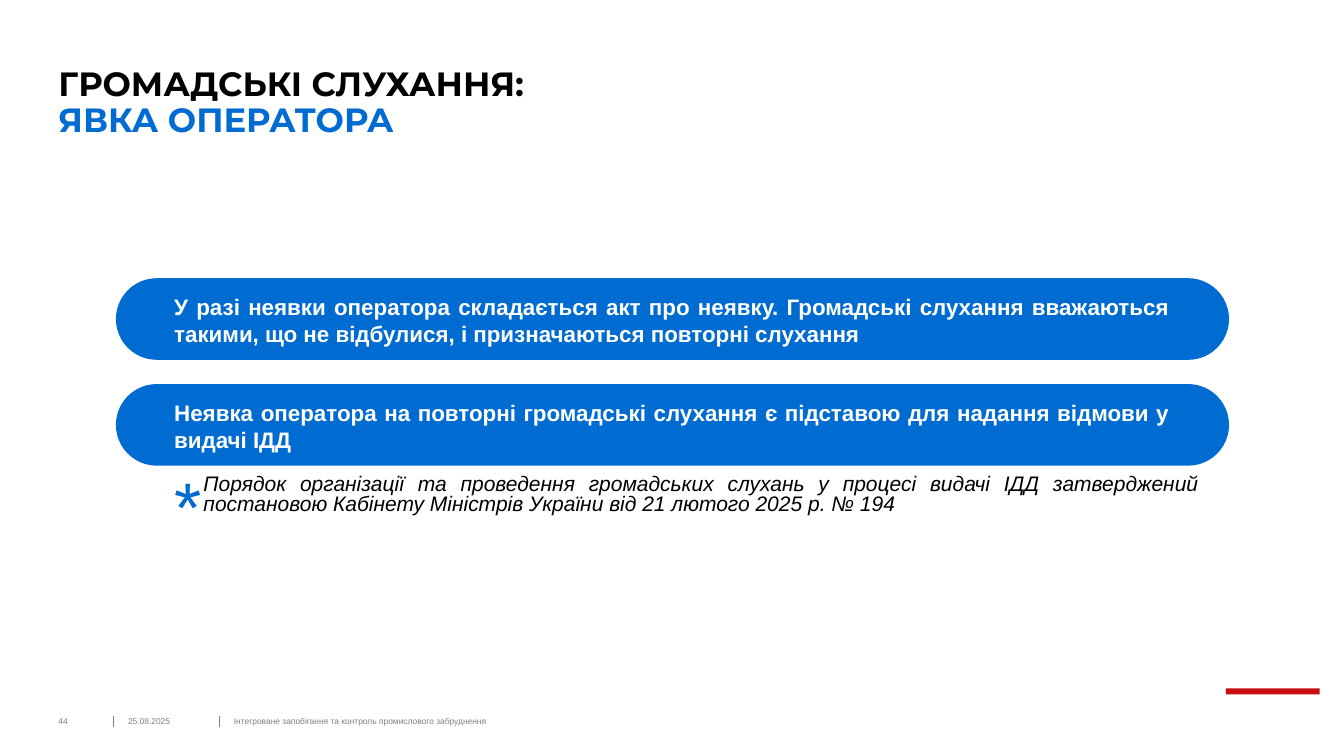
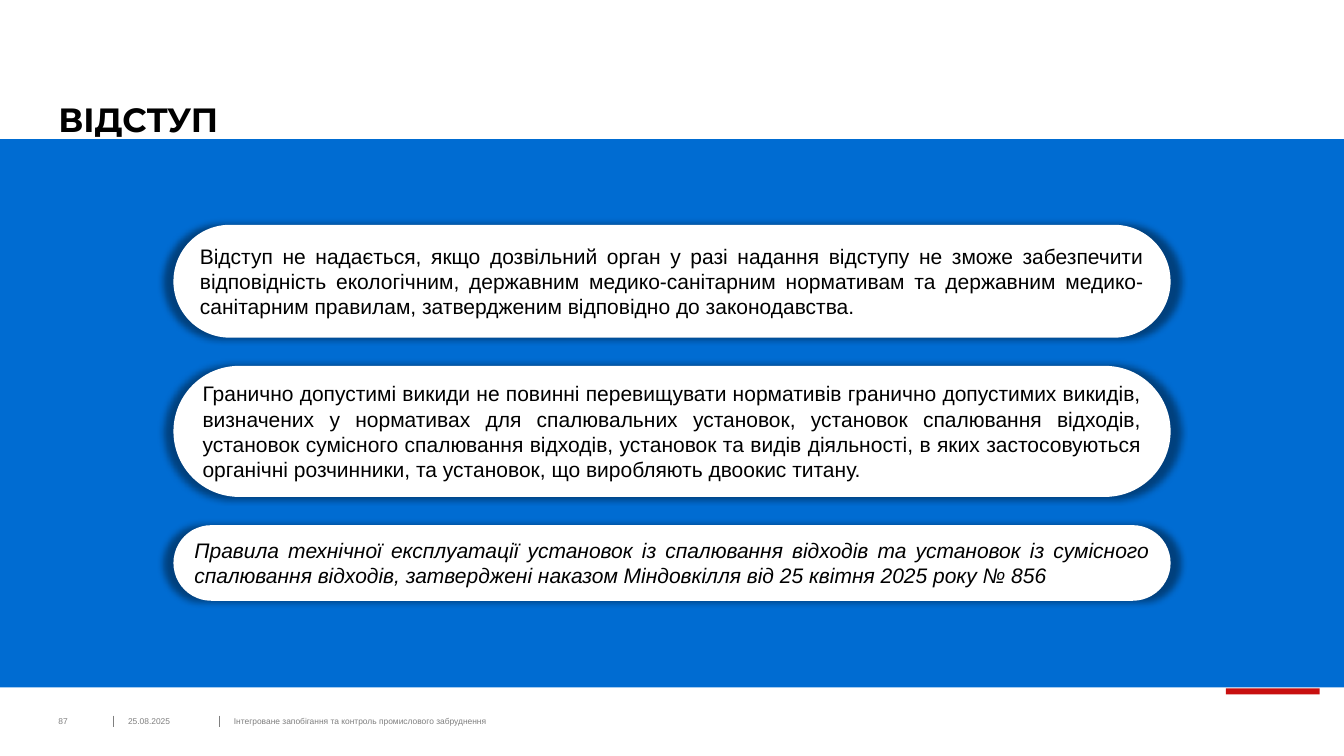
"""Build two slides on public hearings and derogations in integrated permitting."""
from lxml.etree import SubElement
from pptx import Presentation
from pptx.dml.color import RGBColor
from pptx.enum.shapes import MSO_CONNECTOR as Connector, MSO_SHAPE as Shape
from pptx.enum.text import MSO_ANCHOR as Anchor, PP_ALIGN as Align
from pptx.oxml import parse_xml
from pptx.oxml.ns import nsdecls, qn
from pptx.util import Inches, Pt

BLUE = RGBColor(0x00, 0x6C, 0xD2)
RED = RGBColor(0xC8, 0x0F, 0x0F)
GREY = RGBColor(0x7F, 0x7F, 0x7F)
BLACK = RGBColor(0x00, 0x00, 0x00)
WHITE = RGBColor(0xFF, 0xFF, 0xFF)

TITLE_FONT = "Montserrat"
BODY_FONT = "Arial"
MARGIN = 0.58
PADDING = (0.1, 0.05)
SLIDE_WIDTH = 13.33

DATE = "25.08.2025"
TOPIC = "Інтегроване запобігання та контроль промислового забруднення"

ATTENDANCE_RULES = [
    "У разі неявки оператора складається акт про неявку. Громадські слухання вважаються "
    "такими, що не відбулися, і призначаються повторні слухання",
    "Неявка оператора на повторні громадські слухання є підставою для надання відмови у "
    "видачі ІДД",
]
PROCEDURE_NOTE = (
    "Порядок організації та проведення громадських слухань у процесі видачі ІДД "
    "затверджений постановою Кабінету Міністрів України від 21 лютого 2025 р. № 194"
)
DEROGATION_RULES = [
    (1.12, False,
     "Відступ не надається, якщо дозвільний орган у разі надання відступу не зможе "
     "забезпечити відповідність екологічним, державним медико-санітарним нормативам та "
     "державним медико-санітарним правилам, затвердженим відповідно до законодавства."),
    (1.3, False,
     "Гранично допустимі викиди не повинні перевищувати нормативів гранично допустимих "
     "викидів, визначених у нормативах для спалювальних установок, установок спалювання "
     "відходів, установок сумісного спалювання відходів, установок та видів діяльності, в "
     "яких застосовуються органічні розчинники, та установок, що виробляють двоокис титану."),
    (0.75, True,
     "Правила технічної експлуатації установок із спалювання відходів та установок із "
     "сумісного спалювання відходів, затверджені наказом Міндовкілля від 25 квітня 2025 "
     "року № 856"),
]


def set_frame(frame, anchor, padding):
    """Set wrapping, anchor and insets of a text frame."""
    frame.word_wrap = True
    frame.vertical_anchor = anchor
    frame.margin_left = frame.margin_right = Inches(padding[0])
    frame.margin_top = frame.margin_bottom = Inches(padding[1])


def add_span(para, text, size, color, font=BODY_FONT, bold=False, italic=False):
    """Add one formatted run to a paragraph."""
    span = para.add_run()
    span.text = text
    span.font.name = font
    span.font.size = Pt(size)
    span.font.bold = bold
    span.font.italic = italic
    span.font.color.rgb = color


def add_box(page, place, anchor=Anchor.TOP, padding=PADDING, align=Align.LEFT, spacing=None):
    """Add a text box and return its first paragraph."""
    box = page.shapes.add_textbox(*map(Inches, place))
    set_frame(box.text_frame, anchor, padding)
    para = box.text_frame.paragraphs[0]
    para.alignment = align
    para.line_spacing = spacing
    return para


def add_block(page, kind, place, color):
    """Add a filled shape without outline or shadow."""
    block = page.shapes.add_shape(kind, *map(Inches, place))
    block.shadow.inherit = False
    block.fill.solid()
    block.fill.fore_color.rgb = color
    block.line.fill.background()
    return block


def add_pill(page, place, color):
    """Add a rectangle with fully rounded ends."""
    pill = add_block(page, Shape.ROUNDED_RECTANGLE, place, color)
    pill.adjustments[0] = 0.5
    return pill


def add_glow_shadow(shape):
    """Give a shape a soft shadow spreading from its centre."""
    effects = shape.element.spPr.find(qn("a:effectLst"))
    effects.append(parse_xml(
        f'<a:outerShdw {nsdecls("a")} blurRad="{Pt(5)}" sx="102000" sy="102000" '
        f'algn="ctr" rotWithShape="0"><a:srgbClr val="{BLACK}">'
        '<a:alpha val="40000"/></a:srgbClr></a:outerShdw>'))


def add_divider(page, left):
    """Add a short vertical line to the footer."""
    line = page.shapes.add_connector(
        Connector.STRAIGHT, Inches(left), Inches(7.1), Inches(left), Inches(7.21))
    line.line.color.rgb = GREY
    line.line.width = Pt(0.75)
    SubElement(line.element.spPr, qn("a:effectLst"))


def add_title(page, *lines):
    """Add a title from pairs of text and colour, one per line."""
    para = add_box(page, (MARGIN, 0.4, 8.03, 0.99), Anchor.BOTTOM, (0, 0), spacing=0.9)
    for index, (text, color) in enumerate(lines):
        if index:
            para.add_line_break()
        add_span(para, text, 24, color, TITLE_FONT, bold=True)


def add_page(deck, number):
    """Add a blank page with the shared footer and red accent."""
    page = deck.slides.add_slide(deck.slide_layouts[6])
    for left in (1.13, 2.18):
        add_divider(page, left)
    add_block(page, Shape.RECTANGLE, (12.16, 6.83, 0.93, 0.06), RED)
    for left, width, text in (
            (MARGIN, 0.51, str(number)), (1.27, 0.79, DATE), (2.32, 7.48, TOPIC)):
        para = add_box(page, (left, 7.1, width, 0.1), Anchor.MIDDLE, (0, 0))
        add_span(para, text, 6, GREY)
    return page


def build_attendance(deck):
    """Build the slide on operator attendance."""
    page = add_page(deck, 44)
    add_title(page, ("ГРОМАДСЬКІ СЛУХАННЯ:", BLACK), ("ЯВКА ОПЕРАТОРА", BLUE))
    for index, rule in enumerate(ATTENDANCE_RULES):
        top = 2.76 + 1.05 * index
        add_pill(page, (1.15, top, 11.04, 0.81), BLUE)
        para = add_box(page, (1.63, top + 0.1, 10.07, 0.64), align=Align.JUSTIFY)
        add_span(para, rule, 16, WHITE, bold=True)
    note = add_box(page, (1.92, 4.67, 10.07, 0.67), align=Align.JUSTIFY, spacing=0.8)
    add_span(note, PROCEDURE_NOTE, 15, BLACK, italic=True)
    add_span(add_box(page, (1.63, 4.54, 0.52, 0.94)), "*", 50, BLUE)


def build_derogation(deck):
    """Build the slide on derogation limits."""
    page = add_page(deck, 87)
    add_block(page, Shape.RECTANGLE, (0, 1.38, SLIDE_WIDTH, 5.44), BLUE)
    add_title(page, ("ВІДСТУП", BLACK))
    top = 2.23
    for height, italic, rule in DEROGATION_RULES:
        pill = add_pill(page, (1.72, top, 9.89, height), WHITE)
        add_glow_shadow(pill)
        set_frame(pill.text_frame, Anchor.MIDDLE, PADDING)
        para = pill.text_frame.paragraphs[0]
        para.alignment = Align.JUSTIFY
        add_span(para, rule, 15, BLACK, italic=italic)
        top += height + 0.28


def main():
    """Build and save the deck."""
    deck = Presentation()
    deck.slide_width = Inches(SLIDE_WIDTH)
    deck.slide_height = Inches(7.5)
    build_attendance(deck)
    build_derogation(deck)
    deck.save("out.pptx")


if __name__ == "__main__":
    main()
